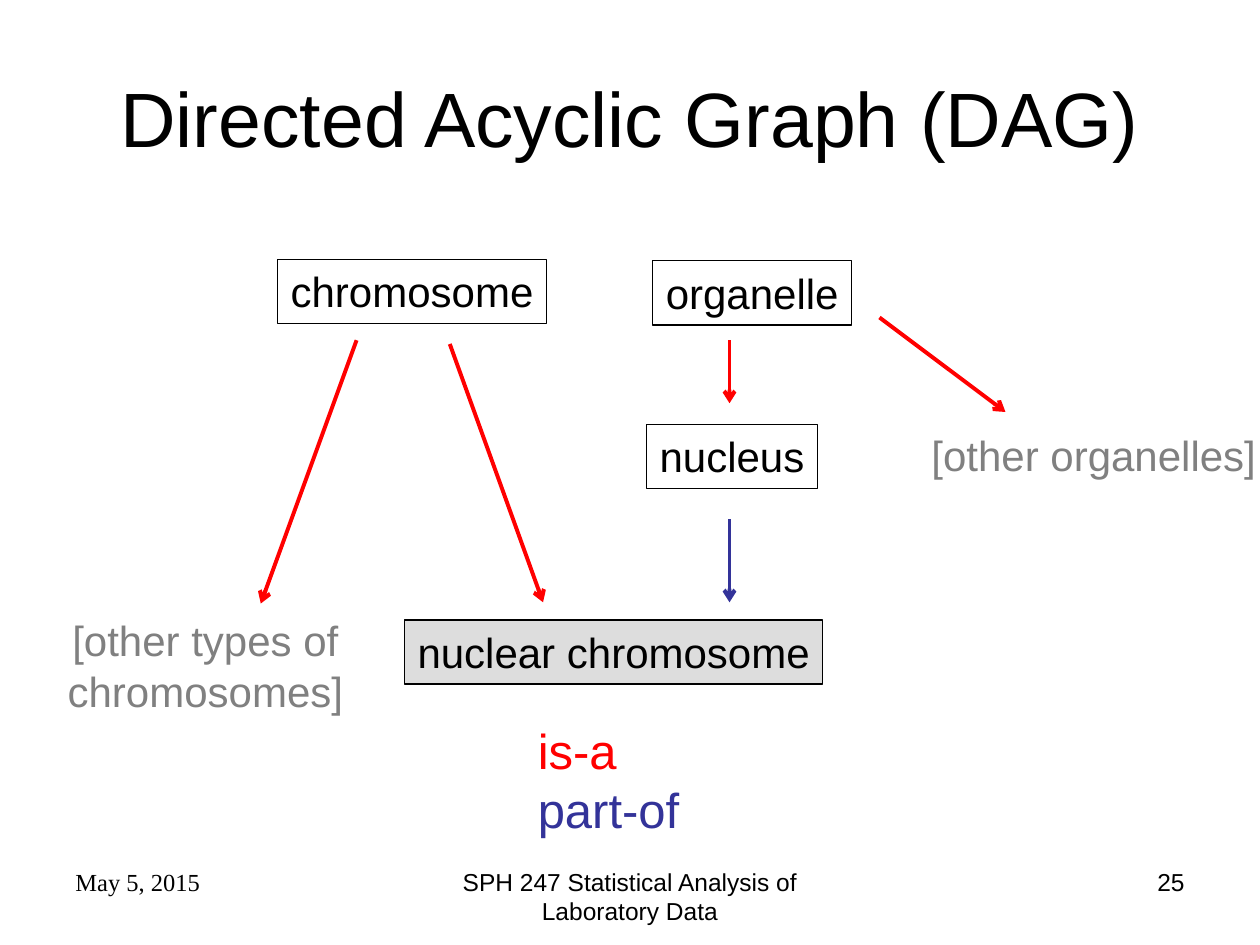
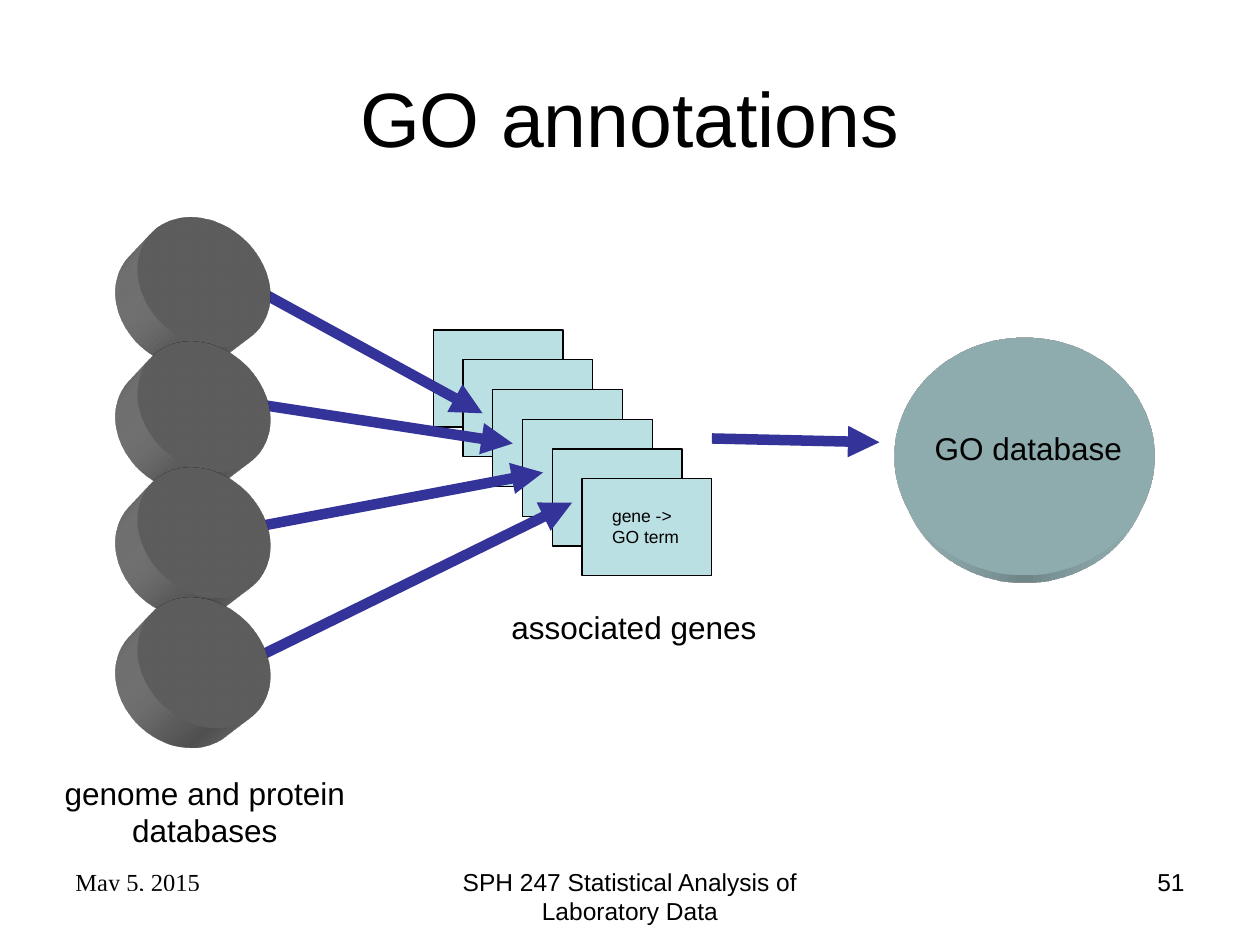
"""Builds two slides on the Gene Ontology: the DAG and the annotation flow."""
from dataclasses import dataclass

from lxml import etree
from pptx import Presentation
from pptx import util as u
from pptx.dml.color import RGBColor
from pptx.enum import shapes, text
from pptx.oxml.ns import qn


@dataclass(frozen=True)
class Theme:
    sans: str = "Arial"
    serif: str = "Times New Roman"
    black: str = "000000"
    white: str = "FFFFFF"
    grey: str = "808080"
    is_a: str = "FF0000"
    part_of: str = "333399"
    highlight: str = "DDDDDD"
    card: str = "BBE0E3"
    title: int = 44
    legend: int = 28
    node: int = 24
    label: int = 18
    footer: int = 14
    small: int = 10
    thin: float = 0.75
    edge: float = 2.25
    flow: float = 6


T = Theme()
LEFT, CENTER, RIGHT = text.PP_ALIGN.LEFT, text.PP_ALIGN.CENTER, text.PP_ALIGN.RIGHT

DATE = "May 5, 2015"
COURSE = "SPH 247 Statistical Analysis of Laboratory Data"
DATE_MASK = (0.47, 7.07, 2.49, 0.22)

DAG_NODES = [
    ("chromosome", (2.2, 2.06, 2.14, 0.51), None),
    ("organelle", (5.18, 2.07, 1.58, 0.51), None),
    ("nucleus", (5.13, 3.37, 1.36, 0.51), None),
    ("nuclear chromosome", (3.21, 4.92, 3.32, 0.51), T.highlight),
]
DAG_OTHERS = [
    ("[other types of chromosomes]", (0.23, 4.83, 2.8, 0.9), True),
    ("[other organelles]", (7.29, 3.36, 2.78, 0.5), False),
]
DAG_EDGES = [
    ((2.83, 2.7), (2.07, 4.79), T.is_a),
    ((3.57, 2.73), (4.31, 4.78), T.is_a),
    ((5.79, 2.7), (5.79, 3.2), T.is_a),
    ((6.98, 2.52), (7.98, 3.27), T.is_a),
    ((5.79, 4.12), (5.79, 4.78), T.part_of),
]
DAG_LEGEND = [("is-a", T.is_a), ("part-of", T.part_of)]

CARD_COUNT, CARD_START, CARD_STEP = 6, (3.44, 2.62), 0.236
SOURCE_TOPS = (1.67, 2.66, 3.66, 4.69)
SOURCE_FLOWS = [
    ((1.8, 2.17), (3.83, 3.28)),
    ((1.86, 3.18), (4.07, 3.52)),
    ((1.83, 4.22), (4.31, 3.75)),
    ((1.85, 5.31), (4.54, 3.99)),
]
GO_FLOW = ((5.65, 3.48), (6.98, 3.51))
GO_LABELS = [
    ("gene -> GO term", (4.76, 3.96, 0.84, 0.43), T.small, LEFT),
    ("associated genes", (3.96, 4.78, 2.26, 0.4), T.label, LEFT),
    ("GO database", (7.32, 3.36, 2.33, 0.4), T.label, LEFT),
    ("genome and protein databases", (0.3, 6.09, 2.65, 0.7), T.label, CENTER),
]
DRUM_DEPTH = 0.47
TURNED = {"lat": "20100000", "lon": "20100000", "rev": "0"}


def rgb(color):
    return RGBColor.from_string(color)


def inches(values):
    return [u.Inches(v) for v in values]


def write(s, lines, size, align=LEFT, font=T.sans, wrap=True, anchor=text.MSO_ANCHOR.TOP):
    tf = s.text_frame
    tf.word_wrap = wrap
    tf.vertical_anchor = anchor
    for i, (words, color) in enumerate(lines):
        p = tf.add_paragraph() if i else tf.paragraphs[0]
        p.alignment = align
        r = p.add_run()
        r.text = words
        r.font.size, r.font.name = u.Pt(size), font
        r.font.color.rgb = rgb(color)


def add_text(slide, words, box, size, align=LEFT, color=T.black, **style):
    sp = slide.shapes.add_textbox(*inches(box))
    write(sp, [(words, color)], size, align, **style)


def add_shape(slide, kind, box, fill=None, line=None):
    s = slide.shapes.add_shape(kind, *inches(box))
    s.shadow.inherit = False
    if fill:
        s.fill.solid()
        s.fill.fore_color.rgb = rgb(fill)
    else:
        s.fill.background()
    if line:
        s.line.color.rgb = rgb(line)
        s.line.width = u.Pt(T.thin)
    else:
        s.line.fill.background()
    return s


def add_arrow(slide, start, end, color, width, head):
    s = slide.shapes.add_connector(shapes.MSO_CONNECTOR.STRAIGHT, *inches(start + end))
    s.line.color.rgb = rgb(color)
    s.line.width = u.Pt(width)
    props = s.element.spPr
    etree.SubElement(props.find(qn("a:ln")), qn("a:tailEnd"), type=head)
    etree.SubElement(props, qn("a:effectLst"))


def add_drum(slide, box, color, camera, turn=None):
    props = add_shape(slide, shapes.MSO_SHAPE.OVAL, box, color).element.spPr
    scene = etree.SubElement(props, qn("a:scene3d"))
    view = etree.SubElement(scene, qn("a:camera"), prst=camera)
    if turn:
        etree.SubElement(view, qn("a:rot"), turn)
    etree.SubElement(scene, qn("a:lightRig"), rig="legacyFlat3", dir="t")
    solid = etree.SubElement(props, qn("a:sp3d"), extrusionH=str(u.Inches(DRUM_DEPTH)),
                             prstMaterial="legacyMatte")
    side = etree.SubElement(solid, qn("a:extrusionClr"))
    etree.SubElement(side, qn("a:srgbClr"), val=color)


def start_slide(prs, title):
    slide = prs.slides.add_slide(prs.slide_layouts[6])
    add_text(slide, title, (0.5, 0.3, 9, 1.25), T.title, CENTER,
             anchor=text.MSO_ANCHOR.MIDDLE)
    add_text(slide, DATE, (0.5, 6.83, 2.33, 0.52), T.footer, font=T.serif)
    return slide


def finish_slide(slide, number):
    add_text(slide, COURSE, (3.42, 6.83, 3.16, 0.52), T.footer, CENTER)
    add_text(slide, number, (7.17, 6.83, 2.33, 0.52), T.footer, RIGHT)


def build_dag(prs):
    slide = start_slide(prs, "Directed Acyclic Graph (DAG)")
    for start, end, color in DAG_EDGES:
        add_arrow(slide, start, end, color, T.edge, "arrow")
    for words, box, fill in DAG_NODES:
        s = add_shape(slide, shapes.MSO_SHAPE.RECTANGLE, box, fill, T.black)
        write(s, [(words, T.black)], T.node, CENTER, wrap=False)
    for words, box, wrap in DAG_OTHERS:
        add_text(slide, words, box, T.node, CENTER, T.grey, wrap=wrap)
    legend = slide.shapes.add_textbox(*inches((4.17, 5.67, 1.33, 1.03)))
    write(legend, DAG_LEGEND, T.legend, wrap=False)
    finish_slide(slide, "25")


def build_annotations(prs):
    slide = start_slide(prs, "GO annotations")
    x, y = CARD_START
    for i in range(CARD_COUNT):
        box = (x + i * CARD_STEP, y + i * CARD_STEP, 1.03, 0.77)
        add_shape(slide, shapes.MSO_SHAPE.RECTANGLE, box, T.card, T.black)
    for start, end in [GO_FLOW, *SOURCE_FLOWS]:
        add_arrow(slide, start, end, T.part_of, T.flow, "triangle")
    add_drum(slide, (7.1, 2.68, 2.06, 1.88), T.card, "legacyPerspectiveBottom")
    for top in SOURCE_TOPS:
        add_drum(slide, (1.05, top, 1.16, 1.12), T.grey, "legacyPerspectiveFront", TURNED)
    for words, box, size, align in GO_LABELS:
        add_text(slide, words, box, size, align)
    add_shape(slide, shapes.MSO_SHAPE.RECTANGLE, DATE_MASK, T.white)
    finish_slide(slide, "51")


def main():
    prs = Presentation()
    prs.slide_width, prs.slide_height = u.Inches(10), u.Inches(7.5)
    build_dag(prs)
    build_annotations(prs)
    prs.save("out.pptx")


if __name__ == "__main__":
    main()
